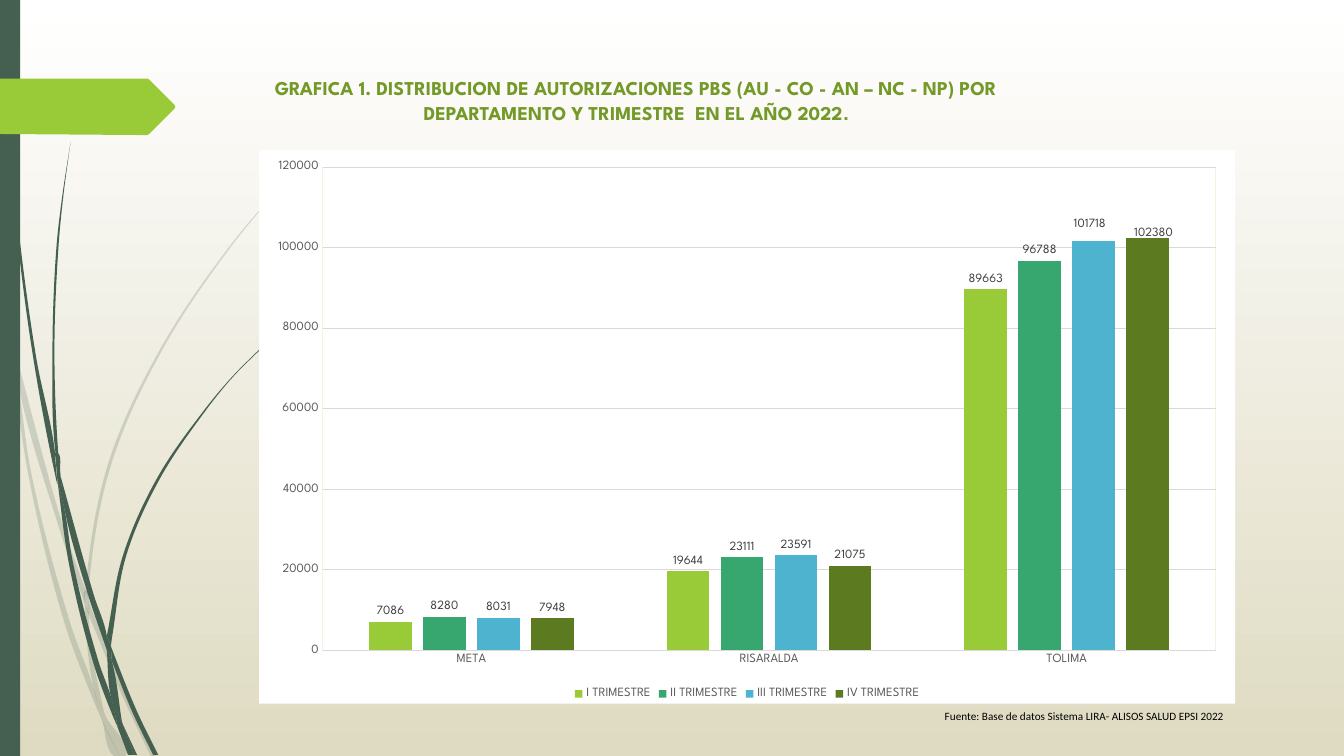
from dataclasses import dataclass

from pptx import Presentation
from pptx.chart.data import CategoryChartData
from pptx.dml.color import RGBColor
from pptx.enum.chart import (XL_CHART_TYPE as ChartType, XL_LABEL_POSITION as LabelPos,
                             XL_LEGEND_POSITION as LegendPos, XL_TICK_MARK as Tick)
from pptx.enum.shapes import MSO_SHAPE as Shape
from pptx.enum.text import MSO_AUTO_SIZE as AutoSize, PP_ALIGN as Align
from pptx.oxml import parse_xml
from pptx.oxml.ns import nsdecls, qn
from pptx.util import Inches, Pt

COLORS = {
    "white": "FFFFFF", "sand": "DFDBC2", "forest": "455F51", "lime": "99CB38",
    "title": "739A28", "black": "000000", "grid": "D9D9D9", "frame": "F2F4DF",
    "axis": "595959", "label": "404040",
    "q1": "99CB38", "q2": "37A76F", "q3": "4EB3CF", "q4": "5C7B20",
}
HEADING = "League Spartan"
Edge = list[tuple[float, float]]


@dataclass
class Outline:
    """Closed outline: smooth edges of three or more points, joined by lines."""
    edges: list[Edge]
    color: str = "forest"
    alpha: int = 100


@dataclass
class Quarter:
    name: str
    values: tuple[int, int, int]
    color: str
    shift: tuple[float, float] | None = None  # offset of the TOLIMA label


@dataclass
class Run:
    text: str
    fmt: dict


@dataclass
class TextBox:
    box: tuple[float, float, float, float]
    align: Align
    wrap: bool
    runs: list[Run]


FAINT_BLADES: list[list[Edge]] = [
    [[(.11, 3.5), (.09, 3.22), (0, 2.82)], [(0, 2.99), (.1, 3.44), (.11, 3.5)]],
    [[(.14, 3.45), (.17, 3.76), (.58, 5.22), (.84, 5.99)], [(.85, 5.86), (.62, 5.2), (.14, 3.45)]],
    [[(.88, 5.96), (.88, 6.1)], [(.88, 6.1), (1.23, 6.94), (1.5, 7.51)],
     [(1.55, 7.51), (1.27, 6.92), (.92, 6.07), (.88, 5.96)]],
    [[(1.19, 7.51), (1.24, 7.51), (1.05, 7.11)]],
    [[(.11, 3.5), (.28, 4.7), (.65, 6.21), (.92, 6.93), (1.01, 7.14)],
     [(.99, 7.07), (.93, 6.83), (.7, 6.19), (.31, 4.69), (.17, 3.76), (.11, 3.5)]],
    [[(.84, 5.99), (.87, 6.46), (.93, 6.83), (.96, 6.92), (1.05, 7.11)],
     [(1.03, 7.06), (.91, 6.46), (.88, 6.1), (.88, 6.08)]],
    [[(.88, 5.96), (.88, 5.84), (1.1, 4.62), (1.6, 3.49), (2.29, 2.45), (2.68, 1.98), (3.12, 1.54)],
     [(3.12, 1.53), (2.68, 1.97), (2.28, 2.44), (1.58, 3.48), (1.07, 4.61), (.85, 5.84),
      (.85, 5.86)]],
    [[(1.01, 7.14), (1.14, 7.51), (1.19, 7.51)]],
    [[(.88, 6.1), (.88, 5.96), (.85, 5.86), (.84, 5.99)]],
    [[(.93, 6.83), (.99, 7.07), (1.01, 7.14), (1.19, 7.51)], [(1.05, 7.11), (.96, 6.92)]],
]
DARK_BLADES: list[list[Edge]] = [
    [[(.03, 0), (.04, .48), (.07, 1.1), (.17, 2.33), (.33, 3.55), (.56, 4.77), (.57, 4.81)],
     [(.55, 4.57), (.55, 4.53), (.36, 3.55), (.19, 2.32), (.08, 1.09), (.05, .48), (.04, 0)]],
    [[(.6, 4.72), (.64, 5.05), (.88, 5.92), (1.06, 6.45)],
     [(1.06, 6.33), (1.06, 6.31), (.93, 5.9), (.6, 4.72)]],
    [[(1.1, 6.41), (1.11, 6.56)], [(1.11, 6.56), (1.32, 7.08), (1.52, 7.49)],
     [(1.57, 7.49), (1.36, 7.06), (1.13, 6.49), (1.1, 6.41)]],
    [[(.57, 4.77), (.68, 5.57), (.93, 6.59), (1.11, 7.08), (1.17, 7.22)],
     [(1.16, 7.17), (1.1, 6.91), (.98, 6.57), (.72, 5.56), (.64, 5.05), (.57, 4.77)]],
    [[(.6, 4.72), (.58, 4.53), (.54, 3.49), (.58, 2.45), (.63, 1.93), (.7, 1.41)],
     [(.7, 1.41), (.62, 1.93), (.56, 2.45), (.52, 3.49), (.55, 4.49), (.6, 4.72)]],
    [[(1.33, 7.49), (1.36, 7.49)], [(1.36, 7.49), (1.22, 7.19)]],
    [[(.57, 4.77), (.64, 5.05)], [(.6, 4.72), (.55, 4.49), (.55, 4.53)]],
    [[(1.11, 6.33), (1.25, 5.52), (1.58, 4.76), (2.05, 4.06), (2.31, 3.74), (2.61, 3.44)],
     [(2.6, 3.44), (2.31, 3.73), (2.04, 4.05), (1.56, 4.74), (1.22, 5.51), (1.06, 6.31)],
     [(1.1, 6.41), (1.11, 6.33)]],
    [[(1.17, 7.22), (1.27, 7.49)], [(1.31, 7.49), (1.17, 7.22)]],
    [[(1.06, 6.45), (1.1, 6.91), (1.16, 7.06), (1.22, 7.19)],
     [(1.21, 7.16), (1.11, 6.56), (1.09, 6.51), (1.06, 6.45)]],
    [[(1.06, 6.45), (1.09, 6.51), (1.11, 6.56)], [(1.1, 6.41), (1.06, 6.31)]],
    [[(1.1, 6.91), (1.16, 7.17), (1.17, 7.22), (1.3, 7.49)],
     [(1.33, 7.49), (1.22, 7.19), (1.16, 7.06), (1.1, 6.91)]],
]
ARROW = Outline([[(0, .78), (1.46, .78)], [(1.48, .79), (1.73, 1.04)], [(1.74, 1.06), (1.73, 1.08)],
                 [(1.48, 1.33), (1.46, 1.34)], [(1.36, 1.34), (0, 1.33)]], "lime")
DEPARTMENTS = ["META", "RISARALDA", "TOLIMA"]
QUARTERS = [
    Quarter("I TRIMESTRE", (7086, 19644, 89663), "q1"),
    Quarter("II TRIMESTRE", (8280, 23111, 96788), "q2"),
    Quarter("III TRIMESTRE", (8031, 23591, 101718), "q3", (-.004, -.012)),
    Quarter("IV TRIMESTRE", (7948, 21075, 102380), "q4", (.006, .01)),
]
TITLE_FMT = {"size": Pt(14), "bold": True, "color": "title"}
TEXTS = [
    TextBox((2.57, .69, 7.48, .61), Align.CENTER, True, [
        Run("GRAFICA 1. DISTRIBUCION DE AUTORIZACIONES PBS (AU - CO - AN – NC - NP) POR "
            "DEPARTAMENTO Y TRIMESTRE  EN EL AÑO 2022", TITLE_FMT | {"name": HEADING}),
        Run(".", TITLE_FMT | {"name": "Arial"})]),
    TextBox((9.14, 6.98, 3.1, .25), Align.RIGHT, False, [
        Run("Fuente: Base de datos Sistema LIRA- ALISOS SALUD EPSI 2022",
            {"size": Pt(8), "name": "Calibri", "color": "black"})]),
]


def rgb(key: str) -> RGBColor:
    return RGBColor.from_string(COLORS[key])


def set_font(font, fmt: dict) -> None:
    for name, value in fmt.items():
        if name == "color":
            font.color.rgb = rgb(value)
        else:
            setattr(font, name, value)


def paint(s, color: str) -> None:
    s.shadow.inherit = False
    s.fill.solid()
    s.fill.fore_color.rgb = rgb(color)
    s.line.fill.background()


def unit(v: complex) -> complex:
    return v / (abs(v) or 1)


def controls(edge: list[complex]) -> list[tuple[complex, complex]]:
    """Bezier control points that make the edge smooth."""
    steps = [b - a for a, b in zip(edge, edge[1:])]
    turns = [unit(unit(u) + unit(v)) for u, v in zip([steps[0], *steps], [*steps, steps[-1]])]
    return [(edge[i] + turns[i] * abs(d) / 3, edge[i + 1] - turns[i + 1] * abs(d) / 3)
            for i, d in enumerate(steps)]


def draw_outline(shapes, outline: Outline) -> None:
    edges = [[complex(Inches(x), Inches(y)) for x, y in edge] for edge in outline.edges]
    pts = [(int(p.real), int(p.imag)) for edge in edges for p in edge]
    fb = shapes.build_freeform(*pts[0], scale=1.0)
    fb.add_line_segments(pts[1:], close=True)
    s = fb.convert_to_shape()
    paint(s, outline.color)
    bends = []
    for edge in edges:
        bends += [None] + (controls(edge) if len(edge) > 2 else [None] * (len(edge) - 1))
    for line, bend in zip(list(s.element.iter(qn("a:lnTo"))), bends[1:]):
        if bend:
            line.tag = qn("a:cubicBezTo")
            for i, c in enumerate(bend):
                line.insert(i, parse_xml(f'<a:pt {nsdecls("a")} x="{int(c.real) - s.left}" '
                                         f'y="{int(c.imag) - s.top}"/>'))
    if outline.alpha < 100:
        clr = s.element.spPr.find(qn("a:solidFill")).find(qn("a:srgbClr"))
        clr.append(parse_xml(f'<a:alpha {nsdecls("a")} val="{outline.alpha * 1000}"/>'))


def draw_text(slide, text: TextBox) -> None:
    tf = slide.shapes.add_textbox(*map(Inches, text.box)).text_frame
    tf.word_wrap, tf.auto_size = text.wrap, AutoSize.SHAPE_TO_FIT_TEXT
    p = tf.paragraphs[0]
    p.alignment, p.line_spacing, p.space_after = text.align, 1.07, Pt(10)
    for run in text.runs:
        r = p.add_run()
        r.text = run.text
        set_font(r.font, run.fmt)


def layout(x: float, y: float, before: str = "", after: str = ""):
    return parse_xml(f'<c:layout {nsdecls("c")}><c:manualLayout>{before}<c:x val="{x}"/>'
                     f'<c:y val="{y}"/>{after}</c:manualLayout></c:layout>')


def draw_chart(slide) -> None:
    data = CategoryChartData()
    data.categories = DEPARTMENTS
    for q in QUARTERS:
        data.add_series(q.name, q.values)
    chart = slide.shapes.add_chart(ChartType.COLUMN_CLUSTERED, Inches(2.57), Inches(1.49),
                                   Inches(9.68), Inches(5.49), data).chart
    axis_fmt = {"size": Pt(9), "name": HEADING, "color": "axis"}
    label_fmt = axis_fmt | {"color": "label"}
    set_font(chart.font, {"size": Pt(10), "name": HEADING, "color": "black"})
    chart.has_title, chart.has_legend = False, True
    chart.legend.position, chart.legend.include_in_layout = LegendPos.BOTTOM, False
    set_font(chart.legend.font, axis_fmt)
    # Axes
    cat, val = chart.category_axis, chart.value_axis
    for axis in (cat, val):
        axis.major_tick_mark = axis.minor_tick_mark = Tick.NONE
        set_font(axis.tick_labels.font, axis_fmt)
    val.minimum_scale, val.maximum_scale, val.major_unit = 0, 120000, 20000
    val.format.line.fill.background()
    for line in (cat.format.line, val.major_gridlines.format.line):
        line.color.rgb, line.width = rgb("grid"), Pt(.75)
    # Columns and their labels
    plot = chart.plots[0]
    plot.gap_width, plot.overlap, plot.vary_by_categories = 219, -27, False
    for i, (series, q) in enumerate(zip(plot.series, QUARTERS), 1):
        series.format.fill.solid()
        series.format.fill.fore_color.rgb = rgb(q.color)
        labels = series.data_labels
        labels.show_value, labels.position = True, LabelPos.OUTSIDE_END
        set_font(labels.font, label_fmt)
        if q.shift:
            label = series.points[2].data_label
            label.position = LabelPos.OUTSIDE_END
            set_font(label.font, label_fmt)
            idx = chart.element.xpath(f".//c:ser[{i}]/c:dLbls/c:dLbl/c:idx")[0]
            idx.addnext(layout(*q.shift))
    # Plot area place and frame, white chart background
    area = chart.element.xpath(".//c:plotArea")[0]
    for old in area.findall(qn("c:layout")):
        area.remove(old)
    area.insert(0, layout(.065, .031, '<c:layoutTarget val="inner"/><c:xMode val="edge"/>'
                          '<c:yMode val="edge"/>', '<c:w val="0.915"/><c:h val="0.873"/>'))
    area.append(parse_xml(
        f'<c:spPr {nsdecls("c", "a")}><a:noFill/><a:ln w="9525"><a:solidFill>'
        f'<a:srgbClr val="{COLORS["frame"]}"/></a:solidFill></a:ln></c:spPr>'))
    chart.element.find(qn("c:chart")).addnext(parse_xml(
        f'<c:spPr {nsdecls("c", "a")}><a:solidFill><a:srgbClr val="{COLORS["white"]}"/>'
        '</a:solidFill><a:ln><a:noFill/></a:ln></c:spPr>'))


def main() -> None:
    prs = Presentation()
    prs.slide_width, prs.slide_height = Inches(13.33), Inches(7.5)
    slide = prs.slides.add_slide(prs.slide_layouts[6])
    # Background and side decoration
    fill = slide.background.fill
    fill.gradient()
    fill.gradient_angle = 270
    for stop, color in zip(fill.gradient_stops, ("white", "sand")):
        stop.color.rgb = rgb(color)
    for blades, alpha in ((FAINT_BLADES, 20), (DARK_BLADES, 100)):
        group = slide.shapes.add_group_shape()
        for edges in blades:
            draw_outline(group.shapes, Outline(edges, alpha=alpha))
    paint(slide.shapes.add_shape(Shape.RECTANGLE, 0, 0, Inches(.2), prs.slide_height), "forest")
    draw_outline(slide.shapes, ARROW)
    # Chart, title and source
    draw_chart(slide)
    for text in TEXTS:
        draw_text(slide, text)
    prs.save("out.pptx")


if __name__ == "__main__":
    main()
